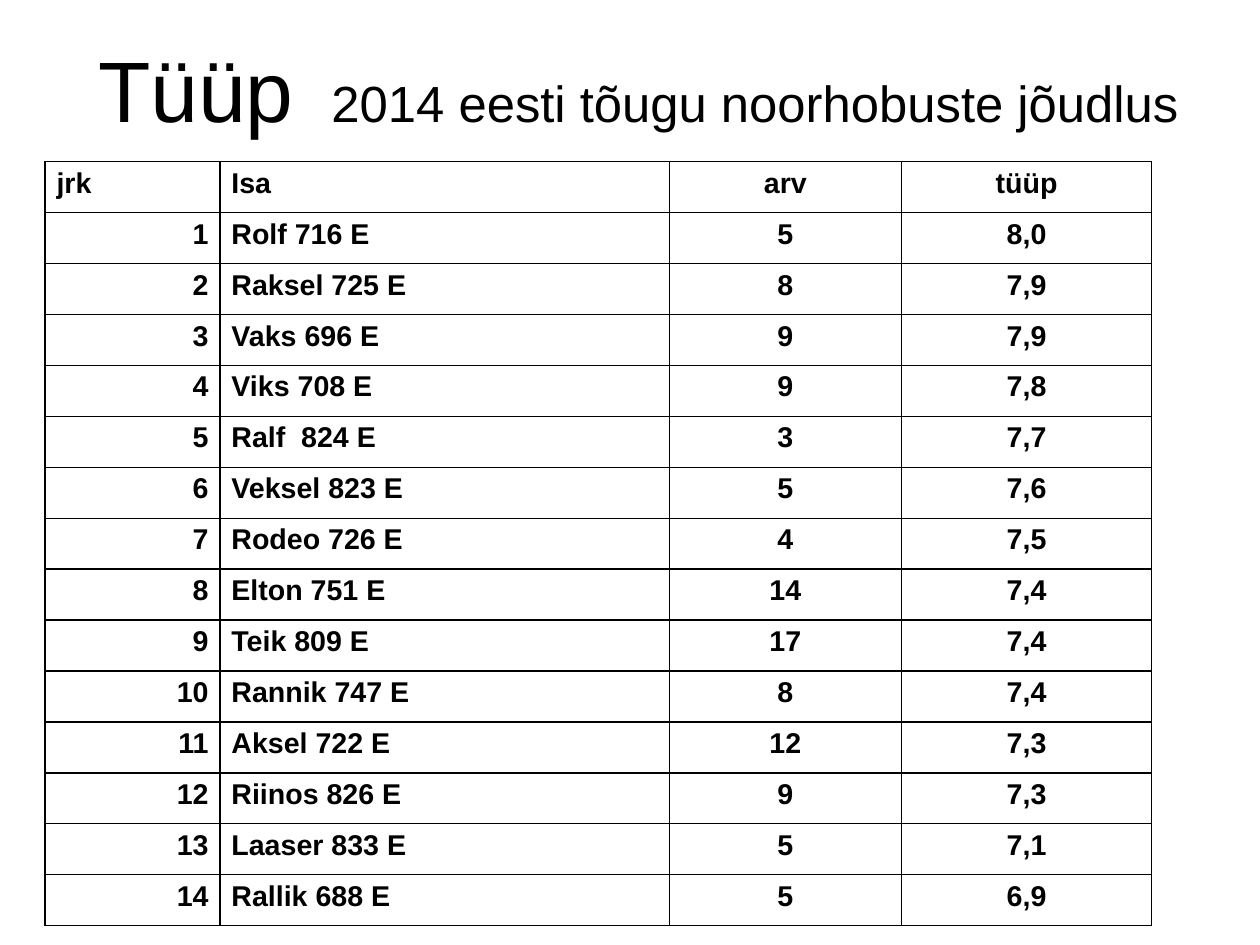
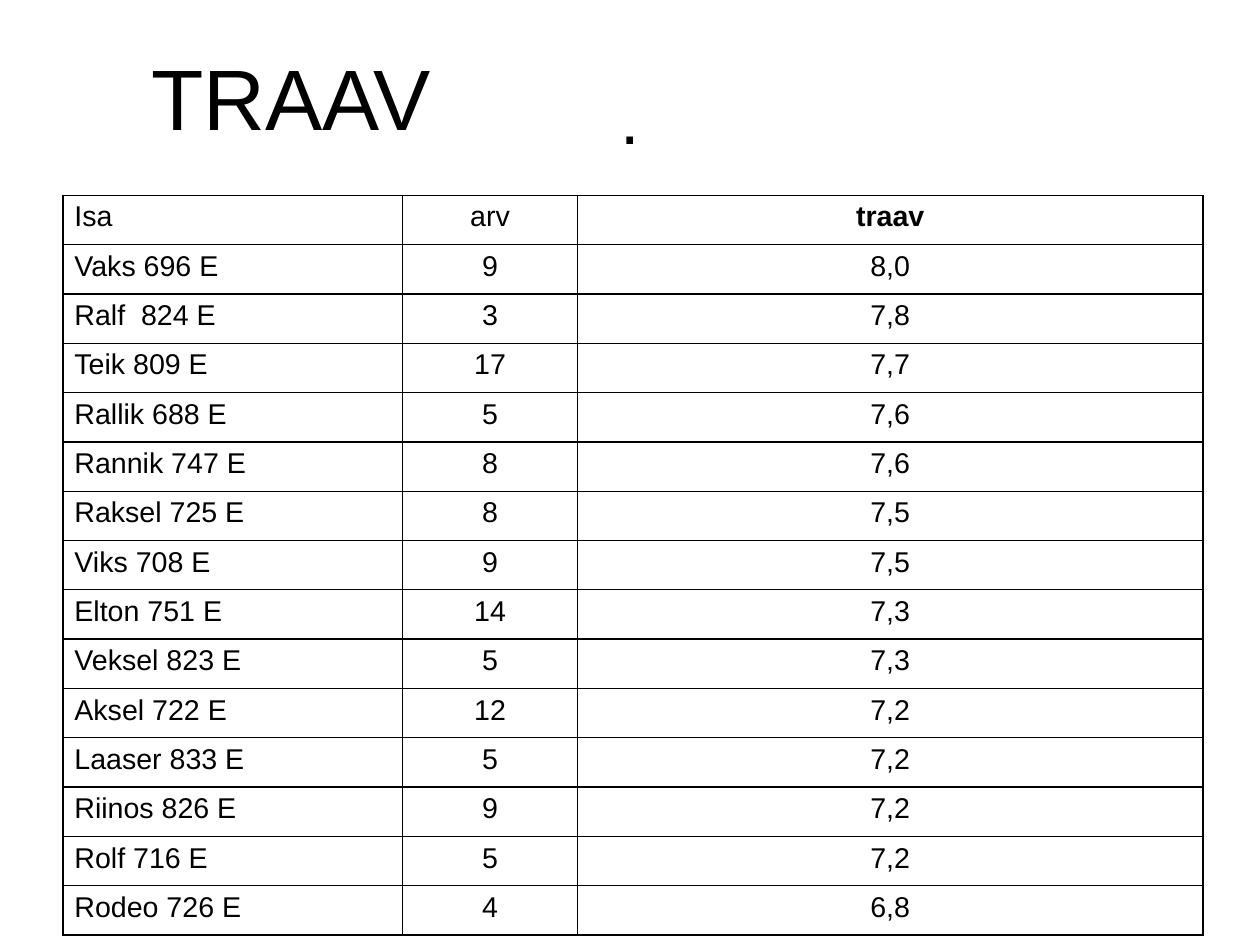
from dataclasses import dataclass

from lxml.etree import SubElement
from pptx import Presentation
from pptx.dml.color import RGBColor
from pptx.enum.text import MSO_ANCHOR, PP_ALIGN
from pptx.oxml.ns import qn
from pptx.slide import Slide
from pptx.table import _Cell
from pptx.text.text import _Paragraph
from pptx.util import Cm, Emu, Pt

SLIDE_WIDTH = Cm(28)
SLIDE_HEIGHT = Cm(21)
BLACK = RGBColor(0, 0, 0)
WHITE = RGBColor(255, 255, 255)
FONT = "Arial"
TITLE_SIZE = 54
DOT_SIZE = 44
SUBTITLE_SIZE = 32
BODY_SIZE = 18
BORDER_WIDTH = Pt(1)
LEFT, CENTER, RIGHT = PP_ALIGN.LEFT, PP_ALIGN.CENTER, PP_ALIGN.RIGHT

SIRE_COUNTS = {
    "Rolf 716 E": 5, "Raksel 725 E": 8, "Vaks 696 E": 9, "Viks 708 E": 9,
    "Ralf  824 E": 3, "Veksel 823 E": 5, "Rodeo 726 E": 4, "Elton 751 E": 14,
    "Teik 809 E": 17, "Rannik 747 E": 8, "Aksel 722 E": 12, "Riinos 826 E": 9,
    "Laaser 833 E": 5, "Rallik 688 E": 5,
}
TYPE_SCORES = ["8,0", "7,9", "7,9", "7,8", "7,7", "7,6", "7,5",
               "7,4", "7,4", "7,4", "7,3", "7,3", "7,1", "6,9"]
TROT_SCORES = {
    "Vaks 696 E": "8,0", "Ralf  824 E": "7,8", "Teik 809 E": "7,7",
    "Rallik 688 E": "7,6", "Rannik 747 E": "7,6", "Raksel 725 E": "7,5",
    "Viks 708 E": "7,5", "Elton 751 E": "7,3", "Veksel 823 E": "7,3",
    "Aksel 722 E": "7,2", "Laaser 833 E": "7,2", "Riinos 826 E": "7,2",
    "Rolf 716 E": "7,2", "Rodeo 726 E": "6,8",
}


@dataclass(frozen=True)
class Area:
    """Percentages of the slide's width and height."""
    left: float
    top: float
    width: float
    height: float

    def lengths(self) -> tuple[Emu, Emu, Emu, Emu]:
        return (Emu(int(SLIDE_WIDTH * self.left / 100)),
                Emu(int(SLIDE_HEIGHT * self.top / 100)),
                Emu(int(SLIDE_WIDTH * self.width / 100)),
                Emu(int(SLIDE_HEIGHT * self.height / 100)))


@dataclass(frozen=True)
class TextRun:
    text: str
    size: int
    bold: bool = False


@dataclass(frozen=True)
class Title:
    area: Area
    runs: tuple[TextRun, ...]
    alignment: PP_ALIGN = CENTER


@dataclass(frozen=True)
class Column:
    heading: str
    weight: float
    values: list[str]
    alignment: PP_ALIGN = CENTER
    heading_alignment: PP_ALIGN = CENTER
    heading_bold: bool = True
    body_bold: bool = False


@dataclass(frozen=True)
class Ranking:
    area: Area
    columns: tuple[Column, ...]


@dataclass(frozen=True)
class RankingSlide:
    titles: tuple[Title, ...]
    ranking: Ranking


def add_run(paragraph: _Paragraph, text_run: TextRun) -> None:
    run = paragraph.add_run()
    run.text = text_run.text
    run.font.name = FONT
    run.font.size = Pt(text_run.size)
    run.font.bold = text_run.bold
    run.font.color.rgb = BLACK


def add_title(slide: Slide, title: Title) -> None:
    frame = slide.shapes.add_textbox(*title.area.lengths()).text_frame
    frame.word_wrap = True
    frame.vertical_anchor = MSO_ANCHOR.MIDDLE
    frame.margin_left = frame.margin_right = 0
    frame.margin_top = frame.margin_bottom = 0
    paragraph = frame.paragraphs[0]
    paragraph.alignment = title.alignment
    for text_run in title.runs:
        add_run(paragraph, text_run)


def add_borders(cell: _Cell) -> None:
    properties = cell._tc.get_or_add_tcPr()
    for side in ("a:lnL", "a:lnR", "a:lnT", "a:lnB"):
        line = SubElement(properties, qn(side), w=str(BORDER_WIDTH))
        fill = SubElement(line, qn("a:solidFill"))
        SubElement(fill, qn("a:srgbClr"), val=str(BLACK))


def fill_cell(cell: _Cell, text_run: TextRun, alignment: PP_ALIGN) -> None:
    add_borders(cell)
    cell.fill.background()
    paragraph = cell.text_frame.paragraphs[0]
    paragraph.alignment = alignment
    add_run(paragraph, text_run)


def add_ranking(slide: Slide, ranking: Ranking) -> None:
    columns = ranking.columns
    row_count = len(columns[0].values) + 1
    left, top, width, height = ranking.area.lengths()
    table = slide.shapes.add_table(
        row_count, len(columns), left, top, width, height).table
    table.first_row = table.horz_banding = False
    for row in table.rows:
        row.height = Emu(height // row_count)
    total_weight = sum(column.weight for column in columns)
    for index, column in enumerate(columns):
        table.columns[index].width = Emu(int(width * column.weight / total_weight))
        fill_cell(table.cell(0, index),
                  TextRun(column.heading, BODY_SIZE, column.heading_bold),
                  column.heading_alignment)
        for row_index, value in enumerate(column.values, start=1):
            fill_cell(table.cell(row_index, index),
                      TextRun(value, BODY_SIZE, column.body_bold),
                      column.alignment)


def counts_of(sires: list[str]) -> list[str]:
    return [str(SIRE_COUNTS[sire]) for sire in sires]


def type_slide() -> RankingSlide:
    sires = list(SIRE_COUNTS)
    places = [str(place) for place in range(1, len(sires) + 1)]
    return RankingSlide(
        (Title(Area(5.72, 0.97, 90, 16.69),
               (TextRun("Tüüp ", TITLE_SIZE),
                TextRun(" 2014 eesti tõugu noorhobuste jõudlus", SUBTITLE_SIZE))),),
        Ranking(Area(3.58, 17.1, 87.84, 80.9), (
            Column("jrk", 1.53, places, RIGHT, LEFT, body_bold=True),
            Column("Isa", 3.93, sires, LEFT, LEFT, body_bold=True),
            Column("arv", 2.03, counts_of(sires), body_bold=True),
            Column("tüüp", 2.19, TYPE_SCORES, body_bold=True))))


def trot_slide() -> RankingSlide:
    sires = list(TROT_SCORES)
    return RankingSlide(
        (Title(Area(5, 4, 90, 16.69), (TextRun(".", DOT_SIZE),)),
         Title(Area(12, 2.3, 80, 15.72), (TextRun("TRAAV", TITLE_SIZE),), LEFT)),
        Ranking(Area(5, 20.66, 90.47, 78.33), (
            Column("Isa", 2.97, sires, LEFT, LEFT, heading_bold=False),
            Column("arv", 1.53, counts_of(sires), heading_bold=False),
            Column("traav", 5.47, list(TROT_SCORES.values())))))


def main() -> None:
    presentation = Presentation()
    presentation.slide_width = SLIDE_WIDTH
    presentation.slide_height = SLIDE_HEIGHT
    for content in (type_slide(), trot_slide()):
        slide = presentation.slides.add_slide(presentation.slide_layouts[6])
        slide.background.fill.solid()
        slide.background.fill.fore_color.rgb = WHITE
        for title in content.titles:
            add_title(slide, title)
        add_ranking(slide, content.ranking)
    presentation.save("out.pptx")


if __name__ == "__main__":
    main()
